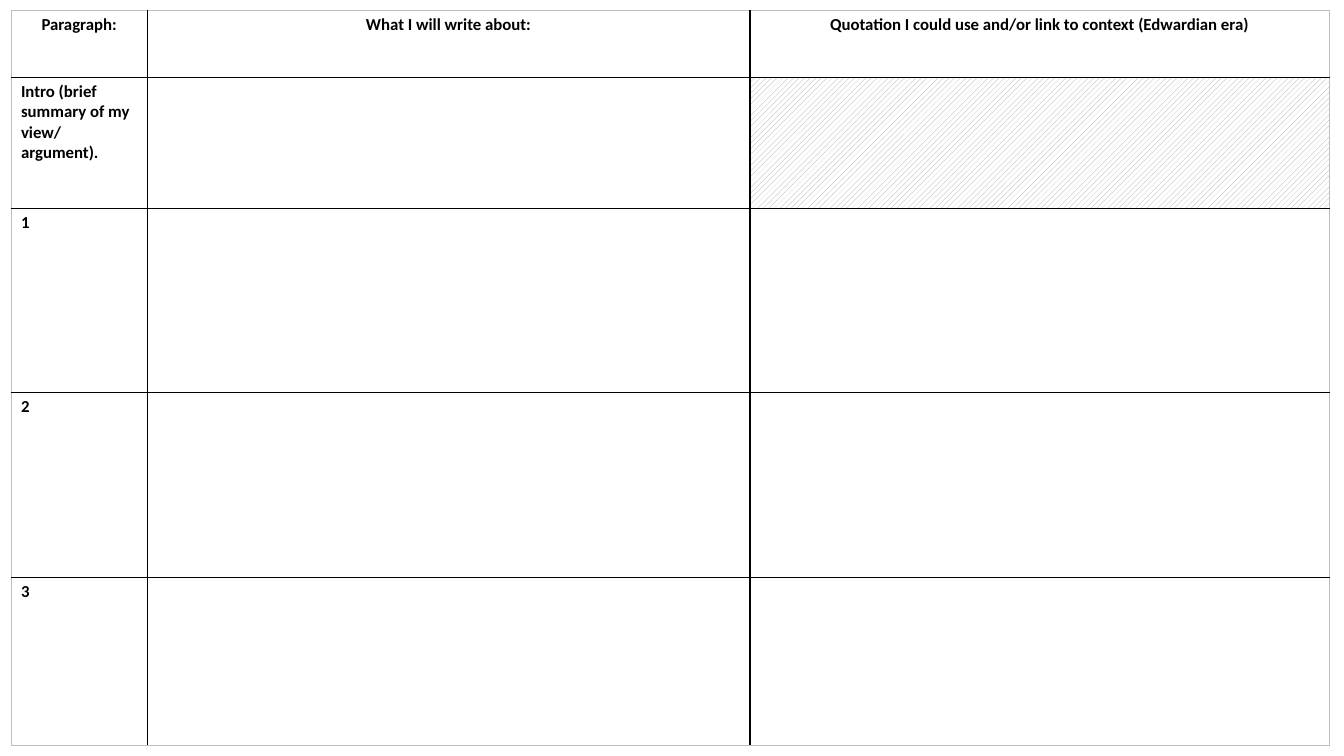
from dataclasses import dataclass

from lxml import etree
from pptx import Presentation
from pptx import util as u
from pptx.dml.color import RGBColor
from pptx.enum import dml, text
from pptx.oxml.ns import qn


@dataclass(frozen=True)
class Theme:
    font: str = "Calibri"
    size: int = 12
    ink: str = "000000"
    paper: str = "FFFFFF"
    hatch: str = "A6A6A6"
    edge: str = "BFBFBF"
    inner_width: float = 1
    edge_width: float = 0.5


THEME = Theme()
COLUMNS = [3.43, 15.19, 14.6]
ROWS = [1.68, 3.3, 4.65, 4.65, 4.22]
HEADINGS = [
    "Paragraph:",
    "What I will write about:",
    "Quotation I could use and/or link to context (Edwardian era)",
]
LABELS = ["Intro (brief summary of my view/ argument).", "1", "2", "3"]
HATCHED = (1, 2)


def write_cell(cell, words, align):
    margins = {"margin_left": 0.25, "margin_right": 0.25,
               "margin_top": 0.1, "margin_bottom": 0.1}
    for name, value in margins.items():
        setattr(cell, name, u.Cm(value))
    p = cell.text_frame.paragraphs[0]
    p.alignment = align
    r = p.add_run()
    r.text = words
    for name, value in {"name": THEME.font, "size": u.Pt(THEME.size), "bold": True}.items():
        setattr(r.font, name, value)
    r.font.color.rgb = RGBColor.from_string(THEME.ink)


def fill_cell(cell, hatched):
    paper = RGBColor.from_string(THEME.paper)
    if hatched:
        cell.fill.patterned()
        cell.fill.pattern = dml.MSO_PATTERN.WIDE_UPWARD_DIAGONAL
        cell.fill.fore_color.rgb = RGBColor.from_string(THEME.hatch)
        cell.fill.back_color.rgb = paper
    else:
        cell.fill.solid()
        cell.fill.fore_color.rgb = paper


def border_cell(cell, outer_sides):
    tc_pr = cell._tc.get_or_add_tcPr()
    for i, (side, outer) in enumerate(outer_sides.items()):
        width = THEME.edge_width if outer else THEME.inner_width
        ln = etree.Element(qn(f"a:{side}"), w=str(u.Pt(width)))
        fill = etree.SubElement(ln, qn("a:solidFill"))
        etree.SubElement(fill, qn("a:srgbClr"), val=THEME.edge if outer else THEME.ink)
        tc_pr.insert(i, ln)


def add_planning_grid(s, left, top, columns, rows):
    frame = s.shapes.add_table(len(rows), len(columns), u.Cm(left), u.Cm(top),
                               u.Cm(sum(columns)), u.Cm(sum(rows)))
    table = frame.table
    for name in ("first_row", "horz_banding"):
        setattr(table, name, False)
    for column, width in zip(table.columns, columns):
        column.width = u.Cm(width)
    for row, height in zip(table.rows, rows):
        row.height = u.Cm(height)
    for y in range(len(rows)):
        for x in range(len(columns)):
            cell = table.cell(y, x)
            fill_cell(cell, (y, x) == HATCHED)
            border_cell(cell, {"lnL": x == 0, "lnR": x == len(columns) - 1,
                               "lnT": y == 0, "lnB": y == len(rows) - 1})
    for x, heading in enumerate(HEADINGS):
        write_cell(table.cell(0, x), heading, text.PP_ALIGN.CENTER)
    for y, label in enumerate(LABELS, 1):
        write_cell(table.cell(y, 0), label, text.PP_ALIGN.LEFT)


def main():
    prs = Presentation()
    prs.slide_width, prs.slide_height = u.Cm(33.87), u.Cm(19.05)
    s = prs.slides.add_slide(prs.slide_layouts[6])
    add_planning_grid(s, 0.28, 0.27, COLUMNS, ROWS)
    prs.save("out.pptx")


if __name__ == "__main__":
    main()
